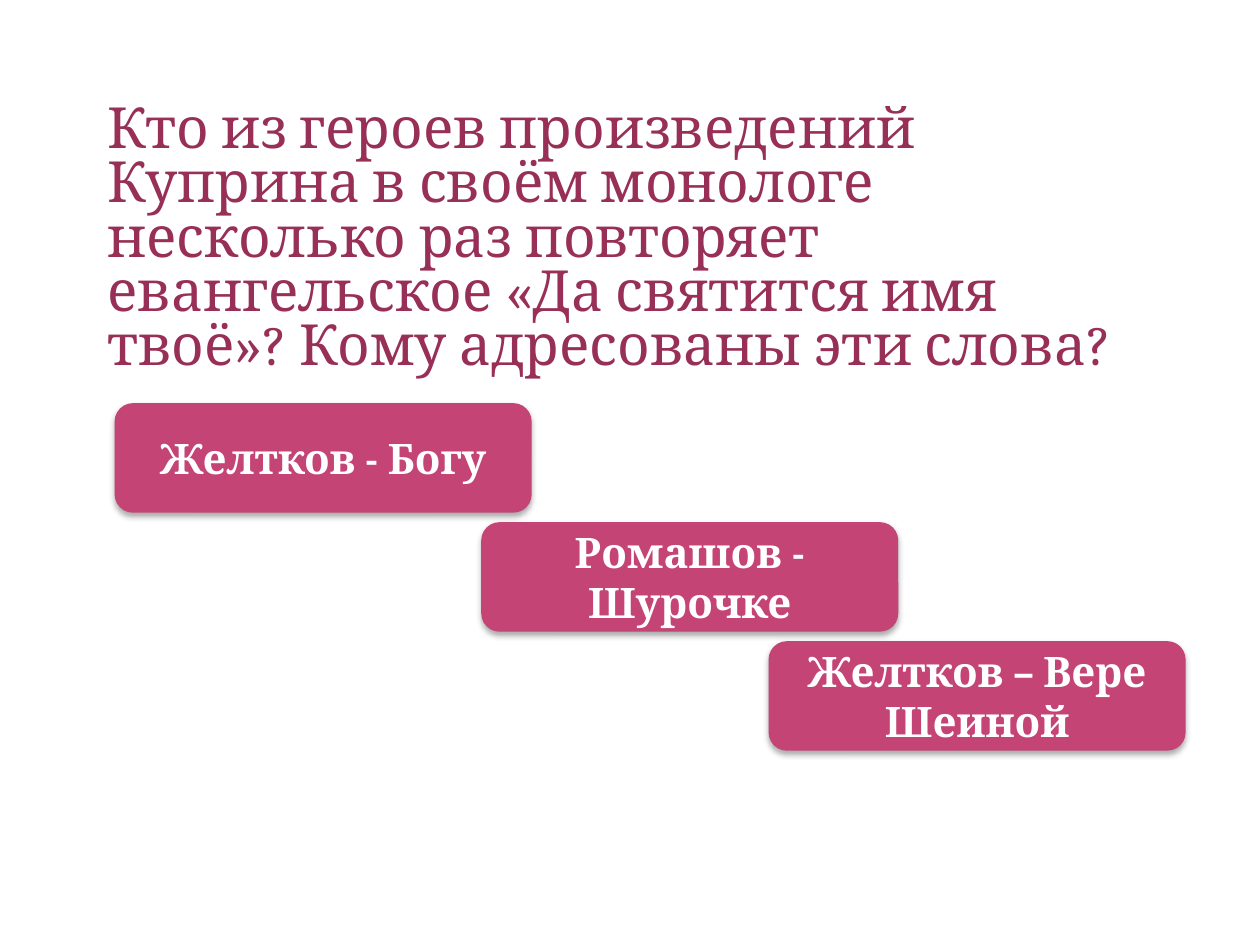
from lxml import etree
from pptx import Presentation
from pptx.dml.color import RGBColor
from pptx.enum.shapes import MSO_SHAPE as Shape
from pptx.enum.text import MSO_ANCHOR as Anchor, MSO_AUTO_SIZE as AutoSize, PP_ALIGN as Align
from pptx.oxml.ns import qn
from pptx.util import Pt

COLORS = {"title": "972F57", "answer": "C44475", "text": "FFFFFF", "shadow": "000000"}
FONT = "Cambria"

QUESTION = ("Кто из героев произведений Куприна в своём монологе несколько раз повторяет "
            "евангельское «Да святится имя твоё»? Кому адресованы эти слова?")
ANSWERS = [(65.5, "Желтков - Богу"),
           (275, "Ромашов - Шурочке"),
           (439.2, "Желтков – Вере Шеиной")]
ANSWER_TOP, ANSWER_STEP = 230.4, 68
ANSWER_W, ANSWER_H = 238.3, 62.6


class SlideBuilder:
    def __init__(self, slide):
        self.slide = slide

    def text(self, shape, text, size, color, anchor, align, bold=False):
        tf = shape.text_frame
        tf.word_wrap = True
        tf.auto_size = AutoSize.NONE
        tf.vertical_anchor = anchor
        p = tf.paragraphs[0]
        p.alignment = align
        r = p.add_run()
        r.text = text
        r.font.name = FONT
        r.font.size = Pt(size)
        r.font.bold = bold
        r.font.color.rgb = RGBColor.from_string(COLORS[color])
        return p

    def title(self, text, left, top, width, height):
        sp = self.slide.shapes.title
        sp.left, sp.top, sp.width, sp.height = Pt(left), Pt(top), Pt(width), Pt(height)
        p = self.text(sp, text, 32.4, "title", Anchor.BOTTOM, Align.LEFT)
        p.line_spacing = 0.8

    def answer(self, text, left, top):
        sp = self.slide.shapes.add_shape(Shape.ROUNDED_RECTANGLE, Pt(left), Pt(top),
                                         Pt(ANSWER_W), Pt(ANSWER_H))
        sp.fill.solid()
        sp.fill.fore_color.rgb = RGBColor.from_string(COLORS["answer"])
        sp.line.fill.background()
        self.soft_shadow(sp)
        self.text(sp, text, 24, "text", Anchor.MIDDLE, Align.CENTER, bold=True)

    def soft_shadow(self, sp):
        sp.shadow.inherit = False
        effects = sp.element.spPr.find(qn("a:effectLst"))
        shadow = etree.SubElement(effects, qn("a:outerShdw"), blurRad=str(Pt(3.5)),
                                  dist=str(Pt(2.2)), dir="5400000", rotWithShape="0")
        color = etree.SubElement(shadow, qn("a:srgbClr"), val=COLORS["shadow"])
        etree.SubElement(color, qn("a:alpha"), val="32000")


def main():
    prs = Presentation()
    prs.slide_width, prs.slide_height = Pt(720), Pt(540)
    s = SlideBuilder(prs.slides.add_slide(prs.slide_layouts[5]))
    s.title(QUESTION, 54, 49, 594, 170)
    for i, (left, text) in enumerate(ANSWERS):
        s.answer(text, left, ANSWER_TOP + i * ANSWER_STEP)
    prs.save("out.pptx")


if __name__ == "__main__":
    main()
